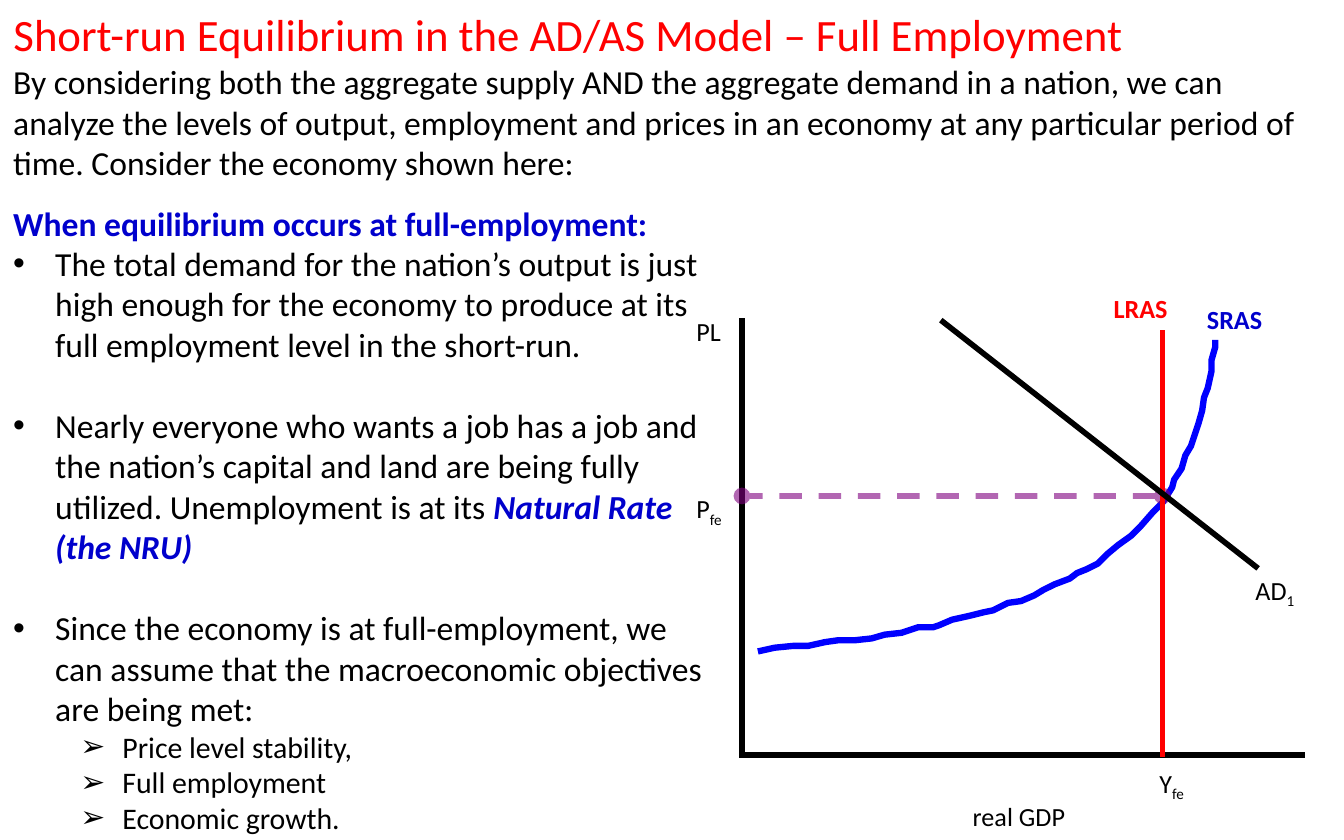
"""Build the slide on short-run equilibrium at full employment."""
from lxml import etree
from pptx import Presentation
from pptx.dml.color import RGBColor
from pptx.enum.dml import MSO_LINE
from pptx.enum.shapes import MSO_CONNECTOR
from pptx.enum.text import MSO_ANCHOR, MSO_AUTO_SIZE, PP_ALIGN
from pptx.oxml.ns import qn
from pptx.util import Pt

STRAIGHT = MSO_CONNECTOR.STRAIGHT
DASH = MSO_LINE.DASH
TOP = MSO_ANCHOR.TOP
NO_AUTOFIT = MSO_AUTO_SIZE.NONE
LEFT = PP_ALIGN.LEFT

BLACK = RGBColor(0x00, 0x00, 0x00)
RED = RGBColor(0xFF, 0x00, 0x00)
NAVY = RGBColor(0x00, 0x00, 0xCC)
BLUE = RGBColor(0x00, 0x00, 0xFF)
PURPLE = RGBColor(0x80, 0x00, 0x80)

FONT = "Calibri"
TITLE = "Short-run Equilibrium in the AD/AS Model – Full Employment"
INTRO = (
    "By considering both the aggregate supply AND the aggregate demand in a nation, "
    "we can analyze the levels of output, employment and prices in an economy at any "
    "particular period of time. Consider the economy shown here:"
)
HEADING = "When equilibrium occurs at full-employment:"
POINTS = [
    ("The total demand for the nation’s output is just high enough for the economy "
     "to produce at its full employment level in the short-run.", ""),
    ("Nearly everyone who wants a job has a job and the nation’s capital and land are "
     "being fully utilized. Unemployment is at its ", "Natural Rate (the NRU)"),
    ("Since the economy is at full-employment, we can assume that the macroeconomic "
     "objectives are being met:", ""),
]
OBJECTIVES = ["Price level stability,", "Full employment", "Economic growth."]

ORIGIN_X, ORIGIN_Y = 397.5, 404.5
FULL_X, FULL_Y = 622.8, 265.7
SUPPLY_CURVE = [
    (406.1, 349.2), (415.4, 347), (424.8, 346.3), (433.4, 345.6), (442.1, 344.2),
    (449.3, 343.4), (457.9, 342.7), (467.3, 342), (474.5, 339.8), (483.1, 339.1),
    (491.8, 336.2), (499.7, 335.5), (502.6, 334.8), (509.8, 331.9), (519.1, 329.8),
    (527, 327.6), (532.1, 326.9), (540, 323.3), (547.2, 321.8), (554.4, 319),
    (558.7, 316.1), (565.2, 313.2), (573.1, 310.3), (577.4, 307.4), (582.5, 304.6),
    (587.5, 302.4), (593.3, 297.4), (599, 292.3), (605.5, 287.3), (610.6, 282.2),
    (617.8, 274.3), (622.8, 268.6), (627.8, 261.4), (629.3, 257), (632.9, 251.3),
    (635, 244.1), (637.9, 239), (640.1, 233.3), (641.5, 226.8), (643.7, 219.6),
    (645.1, 213.1), (647.3, 208.1), (648.7, 199.4), (649.4, 193), (650.9, 185.8),
    (650.9, 182.2),
]


def add_span(para, text, size=18, color=BLACK, bold=False, italic=False, baseline=0):
    """Add formatted text to a paragraph."""
    span = para.add_run()
    span.text = text
    font = span.font
    font.name, font.size, font.bold, font.italic = FONT, Pt(size), bold, italic
    font.color.rgb = color
    if baseline:
        span._r.get_or_add_rPr().set("baseline", str(baseline * 1000))


def add_box(page, left, top, width, height):
    """Add a wrapping text box and return its text frame."""
    box = page.shapes.add_textbox(Pt(left), Pt(top), Pt(width), Pt(height))
    box.text_frame.word_wrap = True
    return box.text_frame


def add_title(page):
    """Place and format the title."""
    title = page.shapes.title
    title.left, title.top, title.width, title.height = Pt(0), Pt(0), Pt(720), Pt(36)
    frame = title.text_frame
    frame.vertical_anchor, frame.auto_size = TOP, NO_AUTOFIT
    para = frame.paragraphs[0]
    para.alignment = LEFT
    add_span(para, TITLE, size=24, color=RED)


def add_bullet(frame, mark, indent, level=0, space=0):
    """Add a bulleted paragraph with a hanging indent."""
    para = frame.add_paragraph()
    para.level = level
    para.space_before = Pt(space)
    properties = para._p.get_or_add_pPr()
    properties.set("marL", str(Pt(indent)))
    properties.set("indent", str(-Pt(22.5)))
    etree.SubElement(properties, qn("a:buFont")).set("typeface", "Arial")
    etree.SubElement(properties, qn("a:buChar")).set("char", mark)
    return para


def add_explanation(page):
    """Add the heading, the main points and the objectives."""
    frame = add_box(page, 0, 105, 392.5, 345)
    add_span(frame.paragraphs[0], HEADING, color=NAVY, bold=True)
    for index, (text, key_term) in enumerate(POINTS):
        para = add_bullet(frame, "•", 22.5, space=22 if index else 0)
        add_span(para, text)
        if key_term:
            add_span(para, key_term, color=NAVY, bold=True, italic=True)
    for objective in OBJECTIVES:
        add_span(add_bullet(frame, "➢", 58.5, level=1), objective, size=16)


def add_label(page, left, top, width, text, subscript="", color=BLACK, bold=False):
    """Add a graph label with an optional subscript."""
    para = add_box(page, left, top, width, 24.5).paragraphs[0]
    add_span(para, text, size=14, color=color, bold=bold)
    if subscript:
        add_span(para, subscript, size=14, color=color, baseline=-25)


def add_line(page, start, end, color=BLACK):
    """Add a straight line between two points."""
    line = page.shapes.add_connector(STRAIGHT, *map(Pt, start + end))
    line.line.color.rgb = color
    line.line.width = Pt(3)
    etree.SubElement(line._element.spPr, qn("a:effectLst"))
    return line


def add_price_guide(page):
    """Add the translucent dashed guide with oval ends."""
    guide = add_line(page, (FULL_X, FULL_Y), (ORIGIN_X, FULL_Y), PURPLE)
    guide.line.dash_style = DASH
    outline = guide.line._get_or_add_ln()
    color = outline.find(".//" + qn("a:srgbClr"))
    etree.SubElement(color, qn("a:alpha")).set("val", "60000")
    for tag in ("a:headEnd", "a:tailEnd"):
        etree.SubElement(outline, qn(tag)).set("type", "oval")


def add_supply_curve(page):
    """Add the open short-run supply curve."""
    builder = page.shapes.build_freeform(*SUPPLY_CURVE[0], scale=Pt(1))
    builder.add_line_segments(SUPPLY_CURVE[1:], close=False)
    curve = builder.convert_to_shape()
    curve.shadow.inherit = False
    curve.fill.background()
    curve.line.color.rgb = BLUE
    curve.line.width = Pt(3.39)


def add_graph(page):
    """Add the axes, curves and labels of the model."""
    add_line(page, (ORIGIN_X, 170.5), (ORIGIN_X, ORIGIN_Y))
    add_line(page, (396, ORIGIN_Y), (699, ORIGIN_Y))
    add_supply_curve(page)
    add_price_guide(page)
    add_line(page, (FULL_X, 405.5), (FULL_X, 177), RED)
    add_line(page, (504, 171.5), (674, 304.5))
    add_label(page, 366, 165.5, 55, "PL")
    add_label(page, 639.5, 159, 61, "SRAS", color=NAVY, bold=True)
    add_label(page, 589.5, 153, 61, "LRAS", color=RED, bold=True)
    add_label(page, 514, 425.5, 93, "real GDP")
    add_label(page, 366, 260.5, 39, "P", "fe")
    add_label(page, 614, 407.5, 41, "Y", "fe")
    add_label(page, 665.5, 304, 54.5, "AD", "1")


def main():
    """Build and save the deck."""
    deck = Presentation()
    deck.slide_width, deck.slide_height = Pt(720), Pt(450)
    page = deck.slides.add_slide(deck.slide_layouts[5])
    add_title(page)
    intro = add_box(page, 0, 29.3, 720, 72)
    add_span(intro.paragraphs[0], INTRO)
    add_graph(page)
    add_explanation(page)
    deck.save("out.pptx")


if __name__ == "__main__":
    main()
